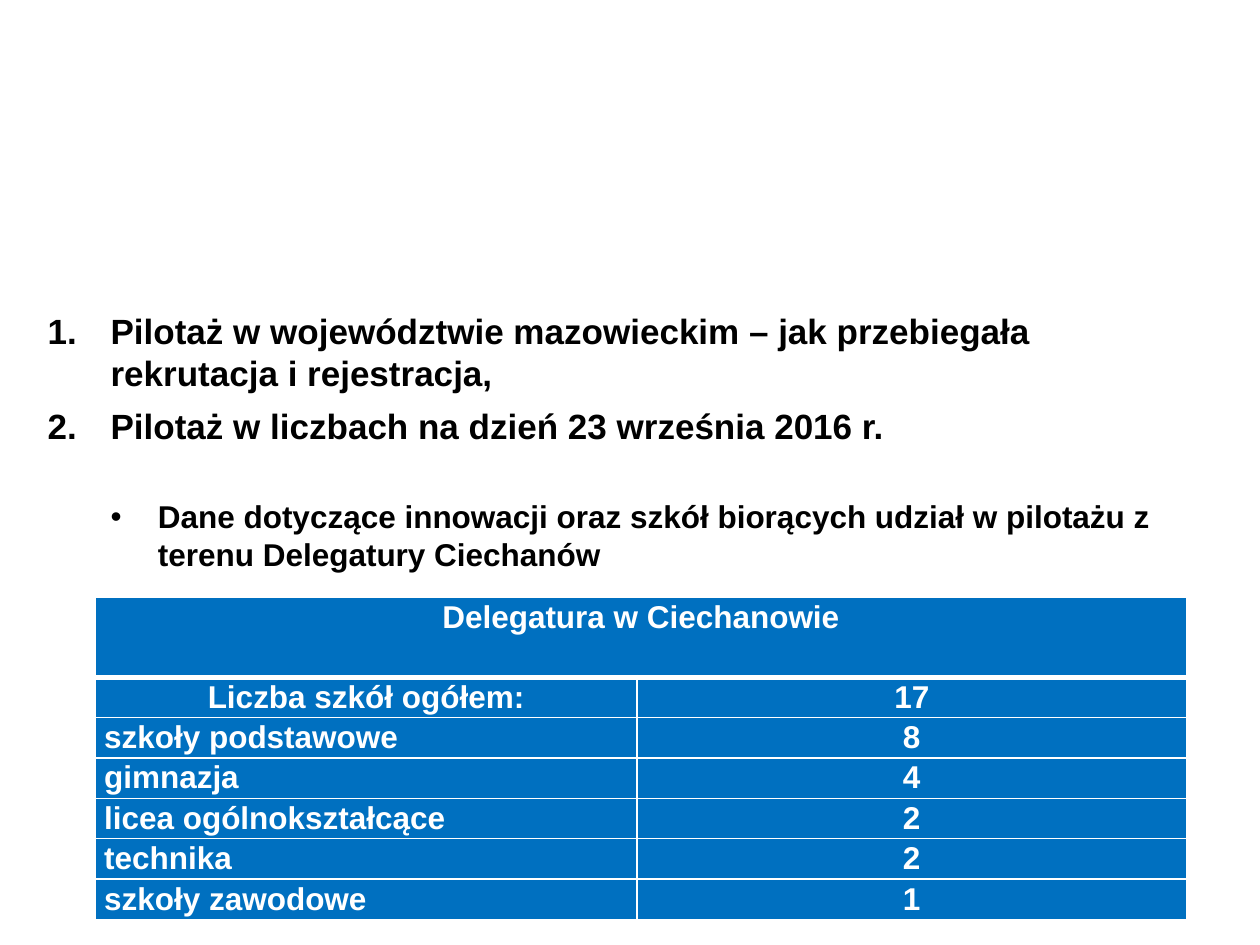
"""Build the slide on the school pilot in the Ciechanów delegation."""
from lxml.etree import SubElement
from pptx import Presentation
from pptx.dml.color import RGBColor
from pptx.enum.text import MSO_ANCHOR, MSO_AUTO_SIZE, PP_ALIGN
from pptx.oxml.ns import qn
from pptx.util import Pt


def write(p, text, size=18, color="000000", align=PP_ALIGN.LEFT, before=0, after=0, line=1.0):
    p.alignment = align
    p.space_before, p.space_after, p.line_spacing = Pt(before), Pt(after), line
    r = p.add_run()
    r.text = text
    r.font.name, r.font.size, r.font.bold = "Arial", Pt(size), True
    r.font.color.rgb = RGBColor.from_string(color)


def set_border(cell, side, width):
    ln = SubElement(cell._tc.get_or_add_tcPr(), qn(f"a:ln{side}"), w=str(Pt(width)))
    SubElement(SubElement(ln, qn("a:solidFill")), qn("a:srgbClr"), val="FFFFFF")


prs = Presentation()
prs.slide_width, prs.slide_height = Pt(720), Pt(540)
s = prs.slides.add_slide(prs.slide_layouts[1])
title = s.shapes.title
title._element.getparent().remove(title._element)

body = s.placeholders[1]
body.left, body.top, body.width, body.height = Pt(20), Pt(173.5), Pt(657.5), Pt(257)
tf = body.text_frame
tf.word_wrap = True
tf.auto_size = MSO_AUTO_SIZE.NONE
tf.vertical_anchor = MSO_ANCHOR.TOP

items = [
    ("Pilotaż w województwie mazowieckim – jak przebiegała rekrutacja i rejestracja,", 0, 20, 0, 6),
    ("Pilotaż w liczbach na dzień 23 września 2016 r.", 0, 20, 0, 6),
    ("Dane dotyczące innowacji oraz szkół biorących udział w pilotażu z terenu Delegatury Ciechanów", 1, 18, 23, 0),
]
for i, (text, level, size, before, after) in enumerate(items):
    p = tf.add_paragraph() if i else tf.paragraphs[0]
    p.level = level
    pPr = p._p.get_or_add_pPr()
    left, hang = (63, 27) if level else (36, 36)
    pPr.set("marL", str(Pt(left)))
    pPr.set("indent", str(-Pt(hang)))
    if level:
        SubElement(pPr, qn("a:buFont"), typeface="Arial")
        SubElement(pPr, qn("a:buChar"), char="•")
    else:
        SubElement(pPr, qn("a:buFont"), typeface="+mj-lt")
        SubElement(pPr, qn("a:buAutoNum"), type="arabicPeriod")
    write(p, text, size, before=before, after=after)

rows = [
    ("Delegatura w Ciechanowie", ""),
    ("Liczba szkół ogółem:", "17"),
    ("szkoły podstawowe", "8"),
    ("gimnazja", "4"),
    ("licea ogólnokształcące", "2"),
    ("technika", "2"),
    ("szkoły zawodowe", "1"),
]
table = s.shapes.add_table(len(rows), 2, Pt(54.5), Pt(341.5), Pt(623.5), Pt(184)).table
table.columns[0].width, table.columns[1].width = Pt(309.5), Pt(314)
for i, row in enumerate(rows):
    table.rows[i].height = Pt(23.1 if i else 45.5)
    for j, text in enumerate(row):
        cell = table.cell(i, j)
        cell.margin_left = cell.margin_right = Pt(5)
        cell.margin_top = cell.margin_bottom = 0
        for side in "LRTB":
            thick = (i, side) in [(0, "B"), (1, "T")]
            set_border(cell, side, 3 if thick else 1)
        cell.fill.solid()
        cell.fill.fore_color.rgb = RGBColor.from_string("0070C0")
        if text:
            align = PP_ALIGN.LEFT if i > 1 and j == 0 else PP_ALIGN.CENTER
            write(cell.text_frame.paragraphs[0], text, color="FFFFFF", align=align, line=1.07)
table.cell(0, 0).merge(table.cell(0, 1))

prs.save("out.pptx")
